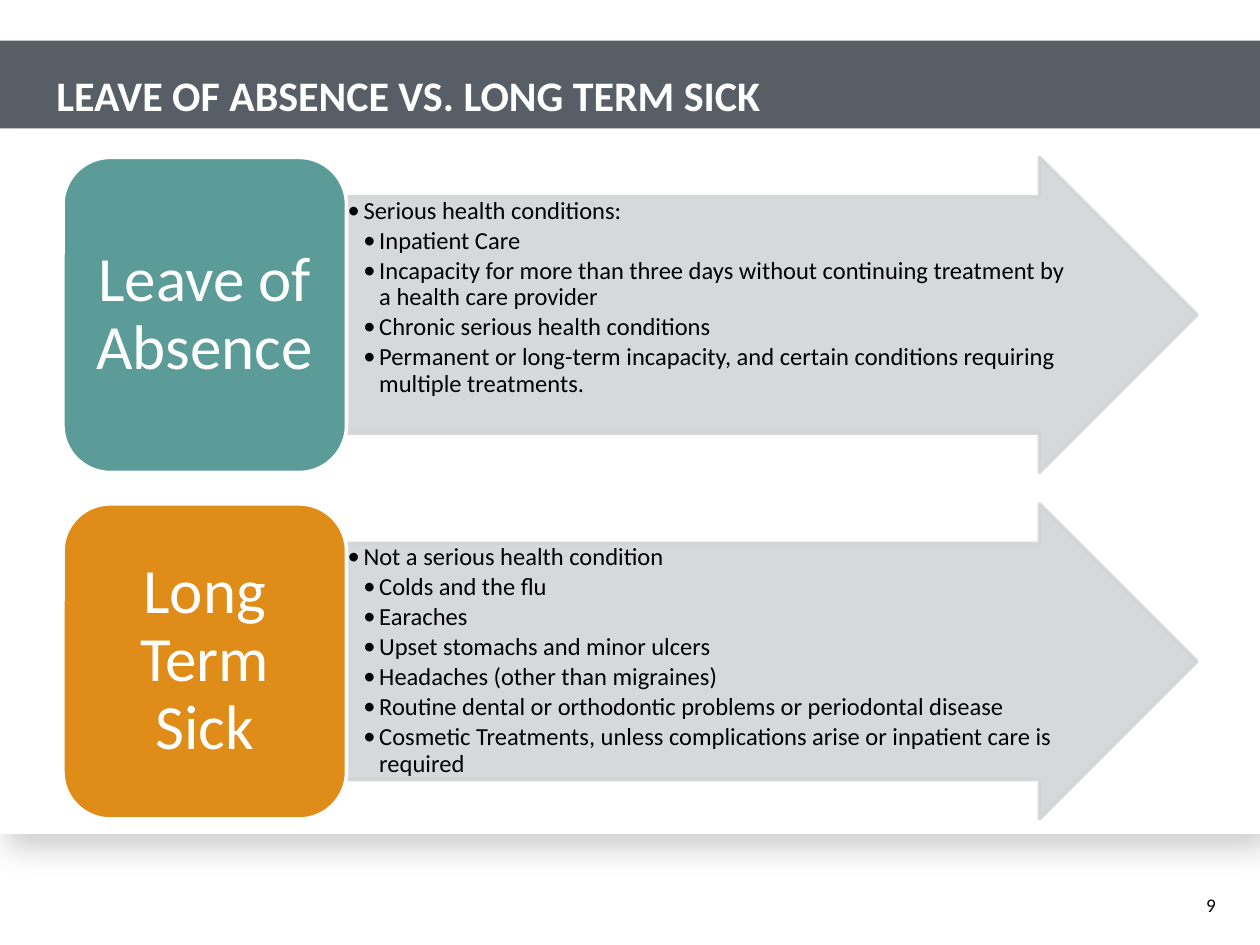
from lxml import etree
from pptx import Presentation
from pptx.dml.color import RGBColor
from pptx.enum.shapes import MSO_SHAPE
from pptx.enum.text import MSO_ANCHOR, PP_ALIGN
from pptx.oxml.ns import qn
from pptx.util import Pt

RECT, ROUNDED, ARROW = MSO_SHAPE.RECTANGLE, MSO_SHAPE.ROUNDED_RECTANGLE, MSO_SHAPE.RIGHT_ARROW
TOP, MIDDLE, BOTTOM = MSO_ANCHOR.TOP, MSO_ANCHOR.MIDDLE, MSO_ANCHOR.BOTTOM
LEFT, CENTER, RIGHT = PP_ALIGN.LEFT, PP_ALIGN.CENTER, PP_ALIGN.RIGHT

FONT = "Calibri"
COLORS = {
    "white": "FFFFFF", "black": "000000", "band": "575E66", "shadow": "808080",
    "arrow": "D3D4D5", "teal": "5B9B98", "orange": "DF8C19",
}

# Label, label colour, heading, points
TOPICS = [
    ("Leave of Absence", "teal", "Serious health conditions:", [
        "Inpatient Care",
        "Incapacity for more than three days without continuing treatment by a health care provider",
        "Chronic serious health conditions",
        "Permanent or long-term incapacity, and certain conditions requiring multiple treatments.",
    ]),
    ("Long Term Sick", "orange", "Not a serious health condition", [
        "Colds and the flu",
        "Earaches",
        "Upset stomachs and minor ulcers",
        "Headaches (other than migraines)",
        "Routine dental or orthodontic problems or periodontal disease",
        "Cosmetic Treatments, unless complications arise or inpatient care is required",
    ]),
]
ROW_TOP, ROW_HEIGHT, ROW_STEP = 90, 180, 198
LABEL_LEFT, LABEL_WIDTH, ARROW_WIDTH = 36, 162, 486
BULLET_INDENT = 9


class SlideBuilder:
    def __init__(self, page):
        self.page = page

    def color(self, name):
        return RGBColor.from_string(COLORS[name])

    def add_alpha(self, fill_parent, percent):
        """Make the solid fill inside the given element partly transparent."""
        tone = fill_parent.find(qn("a:solidFill"))[0]
        etree.SubElement(tone, qn("a:alpha"), val=str(percent * 1000))

    def shape(self, kind, left, top, width, height, fill, line=None):
        shape = self.page.shapes.add_shape(kind, Pt(left), Pt(top), Pt(width), Pt(height))
        shape.shadow.inherit = False
        shape.fill.solid()
        shape.fill.fore_color.rgb = self.color(fill)
        if line:
            shape.line.color.rgb = self.color(line)
            shape.line.width = Pt(2)
        else:
            shape.line.fill.background()
        return shape

    def drop_shadow(self, shape, blur, distance, angle, percent):
        effects = shape._element.spPr.find(qn("a:effectLst"))
        shadow = etree.SubElement(
            effects, qn("a:outerShdw"), blurRad=str(Pt(blur)), dist=str(Pt(distance)),
            dir=str(angle * 60000), algn="ctr", rotWithShape="0")
        tone = etree.SubElement(shadow, qn("a:srgbClr"), val=COLORS["shadow"])
        etree.SubElement(tone, qn("a:alpha"), val=str(percent * 1000))

    def frame(self, shape, anchor, insets):
        frame = shape.text_frame
        frame.word_wrap = True
        frame.vertical_anchor = anchor
        (frame.margin_left, frame.margin_top,
         frame.margin_right, frame.margin_bottom) = map(Pt, insets)
        return frame

    def style(self, para, text, size, color, align=LEFT, bold=False, spacing=None):
        para.text = text
        para.alignment = align
        para.line_spacing = spacing
        para.font.name = FONT
        para.font.size = Pt(size)
        para.font.bold = bold
        para.font.color.rgb = self.color(color)

    def text(self, left, top, width, height, text, insets, **style):
        box = self.page.shapes.add_textbox(Pt(left), Pt(top), Pt(width), Pt(height))
        frame = self.frame(box, BOTTOM, insets)
        self.style(frame.paragraphs[0], text, **style)

    def bullet(self, para, level, text):
        props = para._p.get_or_add_pPr()
        props.set("marL", str(Pt(BULLET_INDENT * level)))
        props.set("indent", str(Pt(-BULLET_INDENT)))
        etree.SubElement(props, qn("a:buFont"), typeface=FONT)
        etree.SubElement(props, qn("a:buChar"), char="•")
        para.level = level
        para.space_after = Pt(2)
        self.style(para, text, 14, "black", spacing=0.9)

    def arrow(self, top, heading, points):
        arrow = self.shape(ARROW, LABEL_LEFT + LABEL_WIDTH, top, ARROW_WIDTH, ROW_HEIGHT,
                           "arrow", "arrow")
        arrow.adjustments[0], arrow.adjustments[1] = 0.75, 0.5
        props = arrow._element.spPr
        self.add_alpha(props, 90)
        self.add_alpha(props.find(qn("a:ln")), 90)
        # The text area stays inside the arrow head by itself
        frame = self.frame(arrow, TOP, (0.7, 0.7, 0.7, 0.7))
        self.bullet(frame.paragraphs[0], 1, heading)
        for point in points:
            self.bullet(frame.add_paragraph(), 2, point)

    def label(self, top, text, fill):
        label = self.shape(ROUNDED, LABEL_LEFT, top, LABEL_WIDTH, ROW_HEIGHT, fill, "white")
        frame = self.frame(label, MIDDLE, (10.8, 5.4, 10.8, 5.4))
        self.style(frame.paragraphs[0], text, 36, "white", CENTER, spacing=0.9)


def main():
    deck = Presentation()
    deck.slide_width, deck.slide_height = Pt(720), Pt(540)
    builder = SlideBuilder(deck.slides.add_slide(deck.slide_layouts[6]))

    # Content panel and title band
    panel = builder.shape(RECT, 0, 73.5, 720, 403, "white")
    builder.drop_shadow(panel, blur=17.5, distance=9, angle=60, percent=40)
    builder.shape(RECT, 0, 23.2, 720, 50.3, "band")

    # Page number and title
    builder.text(658.8, 509, 36, 14.4, "9", (7.2, 0, 0, 0),
                 size=11, color="black", align=RIGHT)
    builder.text(25.2, 36, 669.6, 36, "LEAVE OF ABSENCE VS. LONG TERM SICK",
                 (7.2, 3.6, 7.2, 3.6), size=24, color="white", bold=True, spacing=Pt(24))

    # One arrow with its label per topic
    for row, (name, fill, heading, points) in enumerate(TOPICS):
        top = ROW_TOP + row * ROW_STEP
        builder.arrow(top, heading, points)
        builder.label(top, name, fill)

    deck.save("out.pptx")


if __name__ == "__main__":
    main()
